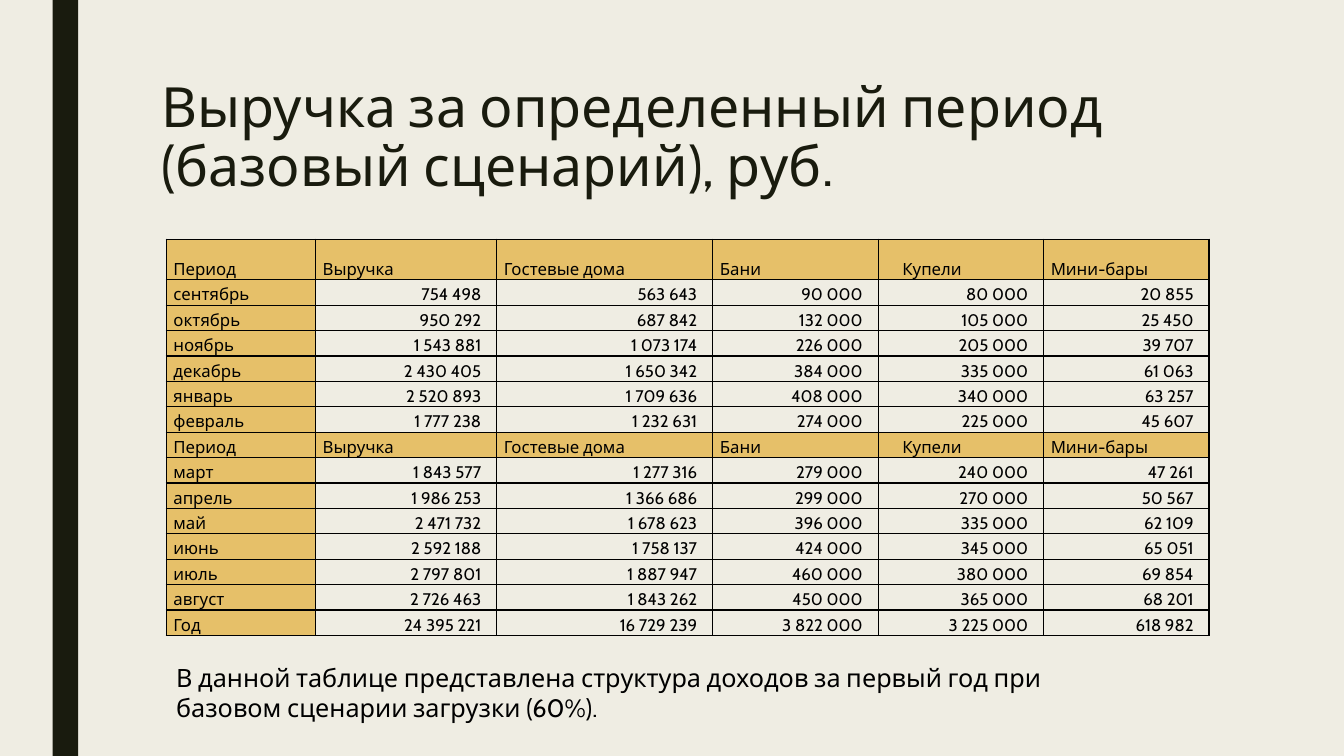
"""Builds the slide with the revenue table of the base scenario."""
from pptx import Presentation
from pptx.dml.color import RGBColor as RGB
from pptx.enum.shapes import MSO_SHAPE as Form
from pptx.enum.text import MSO_ANCHOR as Anchor, PP_ALIGN as Align
from pptx.oxml import parse_xml
from pptx.oxml.ns import nsdecls
from pptx.util import Cm, Pt

FONT = "Cabin"
COLORS = {"back": "EFEDE3", "dark": "191B0E", "gold": "E6C069", "black": "000000"}
HEAD = ["Период", "Выручка", "Гостевые дома", "Бани", "Купели", "Мини-бары"]
ROWS = [
    HEAD,
    ["сентябрь", "754 498", "563 643", "90 000", "80 000", "20 855"],
    ["октябрь", "950 292", "687 842", "132 000", "105 000", "25 450"],
    ["ноябрь", "1 543 881", "1 073 174", "226 000", "205 000", "39 707"],
    ["декабрь", "2 430 405", "1 650 342", "384 000", "335 000", "61 063"],
    ["январь", "2 520 893", "1 709 636", "408 000", "340 000", "63 257"],
    ["февраль", "1 777 238", "1 232 631", "274 000", "225 000", "45 607"],
    HEAD,
    ["март", "1 843 577", "1 277 316", "279 000", "240 000", "47 261"],
    ["апрель", "1 986 253", "1 366 686", "299 000", "270 000", "50 567"],
    ["май", "2 471 732", "1 678 623", "396 000", "335 000", "62 109"],
    ["июнь", "2 592 188", "1 758 137", "424 000", "345 000", "65 051"],
    ["июль", "2 797 801", "1 887 947", "460 000", "380 000", "69 854"],
    ["август", "2 726 463", "1 843 262", "450 000", "365 000", "68 201"],
    ["Год", "24 395 221", "16 729 239", "3 822 000", "3 225 000", "618 982"],
]
WIDTHS = [3.76, 4.57, 5.44, 4.17, 4.17, 4.17]


def style(para, size, color):
    """Sets the font of a paragraph."""
    para.font.name = FONT
    para.font.size = Pt(size)
    para.font.color.rgb = RGB.from_string(COLORS[color])


def add_text(text, box, size, color):
    """Adds a wrapped text box and returns its paragraph."""
    frame = slide.shapes.add_textbox(*map(Cm, box)).text_frame
    frame.word_wrap = True
    para = frame.paragraphs[0]
    para.text = text
    style(para, size, color)
    return para


deck = Presentation()
deck.slide_width, deck.slide_height = Cm(33.87), Cm(19.05)
slide = deck.slides.add_slide(deck.slide_layouts[6])
slide.background.fill.solid()
slide.background.fill.fore_color.rgb = RGB.from_string(COLORS["back"])

bar = slide.shapes.add_shape(Form.RECTANGLE, Cm(1.33), 0, Cm(0.64), deck.slide_height)
bar.shadow.inherit = False
bar.fill.solid()
bar.fill.fore_color.rgb = RGB.from_string(COLORS["dark"])
bar.line.fill.background()

title = add_text("Выручка за определенный период (базовый сценарий), руб.",
                 (3.81, 1.9, 26.67, 4.11), 39.6, "dark")
title.line_spacing = 0.89

table = slide.shapes.add_table(len(ROWS), len(HEAD), Cm(4.19), Cm(6.03),
                               Cm(sum(WIDTHS)), Cm(9.98)).table
table.first_row = table.horz_banding = False
for col, width in zip(table.columns, WIDTHS):
    col.width = Cm(width)
for r, row in enumerate(ROWS):
    table.rows[r].height = Cm(0.64 if r else 1.02)
    for c, text in enumerate(row):
        cell = table.cell(r, c)
        label = row is HEAD or c == 0
        cell.text = text
        cell.vertical_anchor = Anchor.BOTTOM
        cell.margin_left = Cm(0.18)
        cell.margin_right = Cm(0.18 if label else 0.39)
        cell.margin_top = cell.margin_bottom = 0
        para = cell.text_frame.paragraphs[0]
        para.alignment = Align.JUSTIFY if label else Align.RIGHT
        style(para, 12, "black")
        if text == "Купели":
            para._p.get_or_add_pPr().set("indent", str(Cm(0.43)))
        props = cell._tc.get_or_add_tcPr()
        for side in ("lnL", "lnR", "lnT", "lnB"):
            props.append(parse_xml(
                f'<a:{side} {nsdecls("a")} w="{Pt(1)}"><a:solidFill>'
                f'<a:srgbClr val="{COLORS["black"]}"/></a:solidFill></a:{side}>'))
        if label:
            cell.fill.solid()
            cell.fill.fore_color.rgb = RGB.from_string(COLORS["gold"])
        else:
            cell.fill.background()

add_text("В данной таблице представлена структура доходов за первый год "
         "при базовом сценарии загрузки (60%).",
         (4.19, 16.56, 24.03, 1.8), 18, "black")

deck.save("out.pptx")
